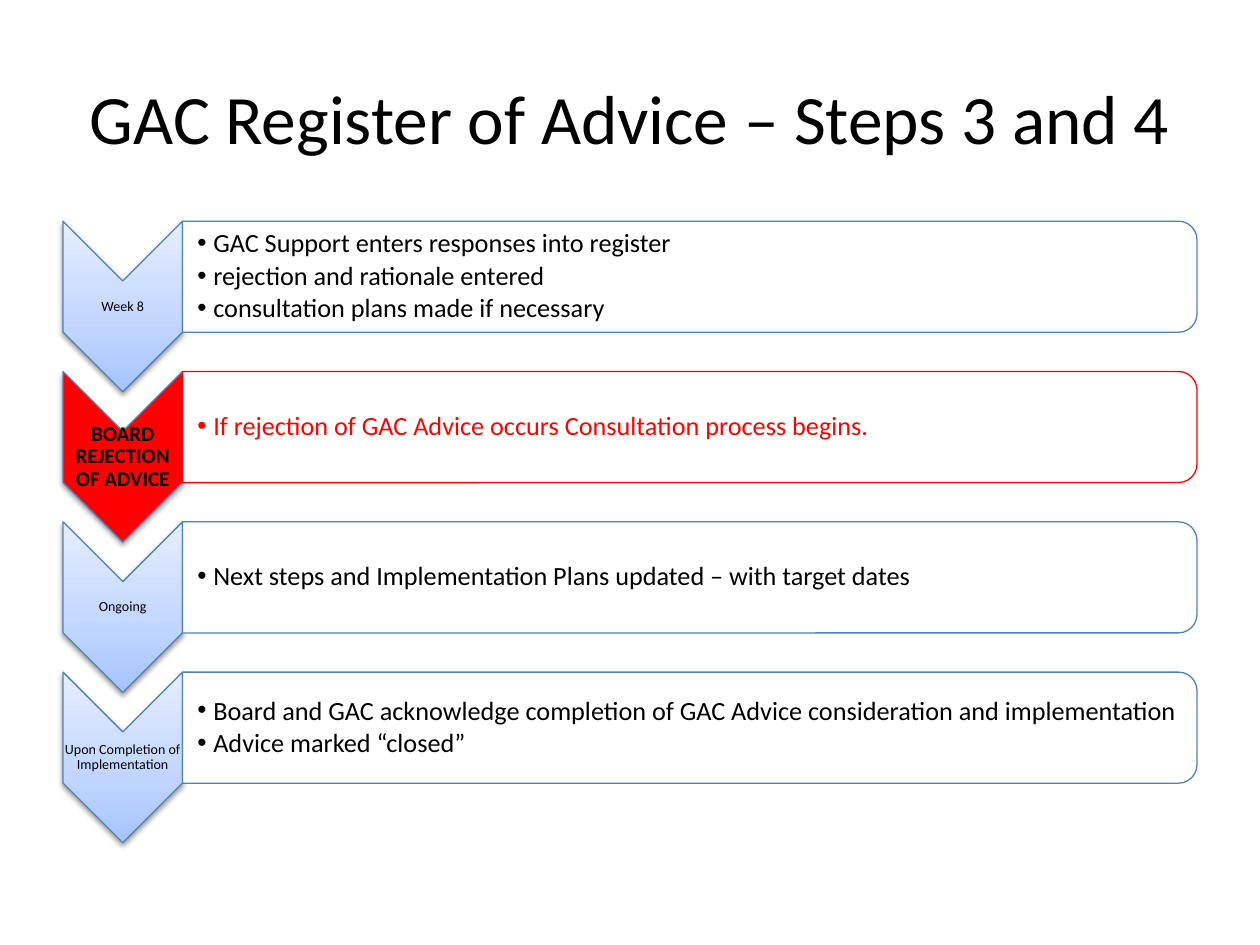
"""Build the GAC Register of Advice slide showing steps 3 and 4."""
import pptx
import pptx.dml.color
import pptx.enum.shapes
import pptx.enum.text
import pptx.oxml
import pptx.oxml.ns
import pptx.util

Cm = pptx.util.Cm
Pt = pptx.util.Pt
RGBColor = pptx.dml.color.RGBColor
Shape = pptx.enum.shapes.MSO_SHAPE
Align = pptx.enum.text.PP_ALIGN
NS = pptx.oxml.ns.nsdecls("a")

BLACK = RGBColor(0x00, 0x00, 0x00)
WHITE = RGBColor(0xFF, 0xFF, 0xFF)
RED = RGBColor(0xFF, 0x00, 0x00)
BLUE = RGBColor(0x4F, 0x81, 0xBD)
STOPS = (
    (0, RGBColor(0xA4, 0xC4, 0xFF)),
    (35, RGBColor(0xBF, 0xD4, 0xFF)),
    (100, RGBColor(0xE6, 0xEE, 0xFF)),
)

FIRST_TOP, PITCH = 4.46, 3.03
STEP_LEFT, STEP_WIDTH, STEP_HEIGHT = 1.27, 2.41, 3.44
PANEL_LEFT, PANEL_WIDTH, PANEL_HEIGHT = 3.68, 20.45, 2.24

STEPS = (
    ("Week 8", False, (
        "GAC Support enters responses into register",
        "rejection and rationale entered",
        "consultation plans made if necessary",
    )),
    ("BOARD REJECTION OF ADVICE", True, (
        "If rejection of GAC Advice occurs Consultation process begins.",
    )),
    ("Ongoing", False, (
        "Next steps and Implementation Plans updated – with target dates",
    )),
    ("Upon Completion of Implementation", False, (
        "Board and GAC acknowledge completion of GAC Advice consideration and implementation",
        "Advice marked “closed”",
    )),
)


def place(shape, left, top, width, height):
    """Set the position and size of a shape in centimetres."""
    shape.left, shape.top = Cm(left), Cm(top)
    shape.width, shape.height = Cm(width), Cm(height)


def write(shape, lines, size, color=BLACK, bold=False, align=Align.LEFT,
          spacing=1.0, after=0, insets=(0.25, 0.13, 0.25, 0.13), bullet=False):
    """Fill a shape with formatted paragraphs."""
    frame = shape.text_frame
    frame.word_wrap = True
    frame.auto_size = pptx.enum.text.MSO_AUTO_SIZE.NONE
    frame.vertical_anchor = pptx.enum.text.MSO_ANCHOR.MIDDLE
    (frame.margin_left, frame.margin_top,
     frame.margin_right, frame.margin_bottom) = map(Cm, insets)
    frame.text = "\n".join(lines)
    for paragraph in frame.paragraphs:
        paragraph.alignment = align
        paragraph.line_spacing = spacing
        paragraph.space_before, paragraph.space_after = Pt(0), Pt(after)
        font = paragraph.runs[0].font
        font.name, font.size, font.bold = "Calibri", Pt(size), bold
        font.color.rgb = color
        if bullet:
            properties = paragraph._p.get_or_add_pPr()
            properties.set("marL", str(Cm(0.32)))
            properties.set("indent", str(Cm(-0.32)))
            properties.append(pptx.oxml.parse_xml(f'<a:buChar {NS} char="•"/>'))


def add_turned_shape(slide, kind, left, top, width, height, line, fill):
    """Add a shape turned a quarter clockwise that covers the given area."""
    shape = slide.shapes.add_shape(kind, 0, 0, 0, 0)
    place(shape, left + (width - height) / 2, top + (height - width) / 2, height, width)
    shape.rotation = 90
    shape.shadow.inherit = False
    shape.fill.solid()
    shape.fill.fore_color.rgb = fill
    shape.line.color.rgb = line
    shape.line.width = Pt(0.75)
    return shape


def add_gradient(shape):
    """Replace the solid fill with the upright blue gradient."""
    stops = "".join(
        f'<a:gs pos="{pos * 1000}"><a:srgbClr val="{color}"/></a:gs>'
        for pos, color in STOPS)
    gradient = pptx.oxml.parse_xml(
        f'<a:gradFill {NS} rotWithShape="0"><a:gsLst>{stops}</a:gsLst>'
        '<a:lin ang="16200000" scaled="0"/></a:gradFill>')
    properties = shape._element.spPr
    properties.replace(properties.find(pptx.oxml.ns.qn("a:solidFill")), gradient)


def add_shadow(shape):
    """Give the shape a soft shadow that falls downwards."""
    effects = shape._element.spPr.find(pptx.oxml.ns.qn("a:effectLst"))
    effects.append(pptx.oxml.parse_xml(
        f'<a:outerShdw {NS} blurRad="{Pt(3.1)}" dist="{Pt(1.6)}" dir="5400000" '
        'rotWithShape="0"><a:srgbClr val="000000"><a:alpha val="38000"/>'
        '</a:srgbClr></a:outerShdw>'))


def add_step(slide, top, label, rejected):
    """Add a downward chevron with its label."""
    chevron = add_turned_shape(slide, Shape.CHEVRON, STEP_LEFT, top,
                               STEP_WIDTH, STEP_HEIGHT, BLUE, RED)
    if not rejected:
        add_gradient(chevron)
    add_shadow(chevron)
    caption = slide.shapes.add_textbox(0, 0, 0, 0)
    place(caption, STEP_LEFT, top + STEP_WIDTH / 2, STEP_WIDTH, STEP_HEIGHT - STEP_WIDTH)
    size = 12 if rejected else 8
    write(caption, [label], size, bold=rejected, align=Align.CENTER,
          spacing=0.9, after=size * 0.35, insets=(0.01, 0.01, 0.01, 0.01))


def add_panel(slide, actions, top, lines, rejected):
    """Add a rounded panel and lay its list of actions over it."""
    add_turned_shape(slide, Shape.ROUND_2_SAME_RECTANGLE, PANEL_LEFT, top,
                     PANEL_WIDTH, PANEL_HEIGHT, RED if rejected else BLUE, WHITE)
    slide.shapes._spTree.append(actions._element)
    place(actions, PANEL_LEFT, top + 0.11, PANEL_WIDTH - 0.1, PANEL_HEIGHT - 0.22)
    write(actions, lines, 15, color=RED if rejected else BLACK, spacing=0.9,
          after=2.25, insets=(0.3, 0.02, 0.02, 0.02), bullet=True)


def main():
    """Build and save the slide."""
    deck = pptx.Presentation()
    deck.slide_width, deck.slide_height = Cm(25.4), Cm(19.05)
    slide = deck.slides.add_slide(deck.slide_layouts.get_by_name("Comparison"))
    title, *action_lists = list(slide.placeholders)
    place(title, 1.27, 0.76, 22.86, 3.18)
    write(title, ["GAC Register of Advice – Steps 3 and 4"], 39.6, align=Align.CENTER)
    for row, (actions, (label, rejected, lines)) in enumerate(zip(action_lists, STEPS)):
        top = FIRST_TOP + row * PITCH
        add_step(slide, top, label, rejected)
        add_panel(slide, actions, top, lines, rejected)
    deck.save("out.pptx")


if __name__ == "__main__":
    main()
